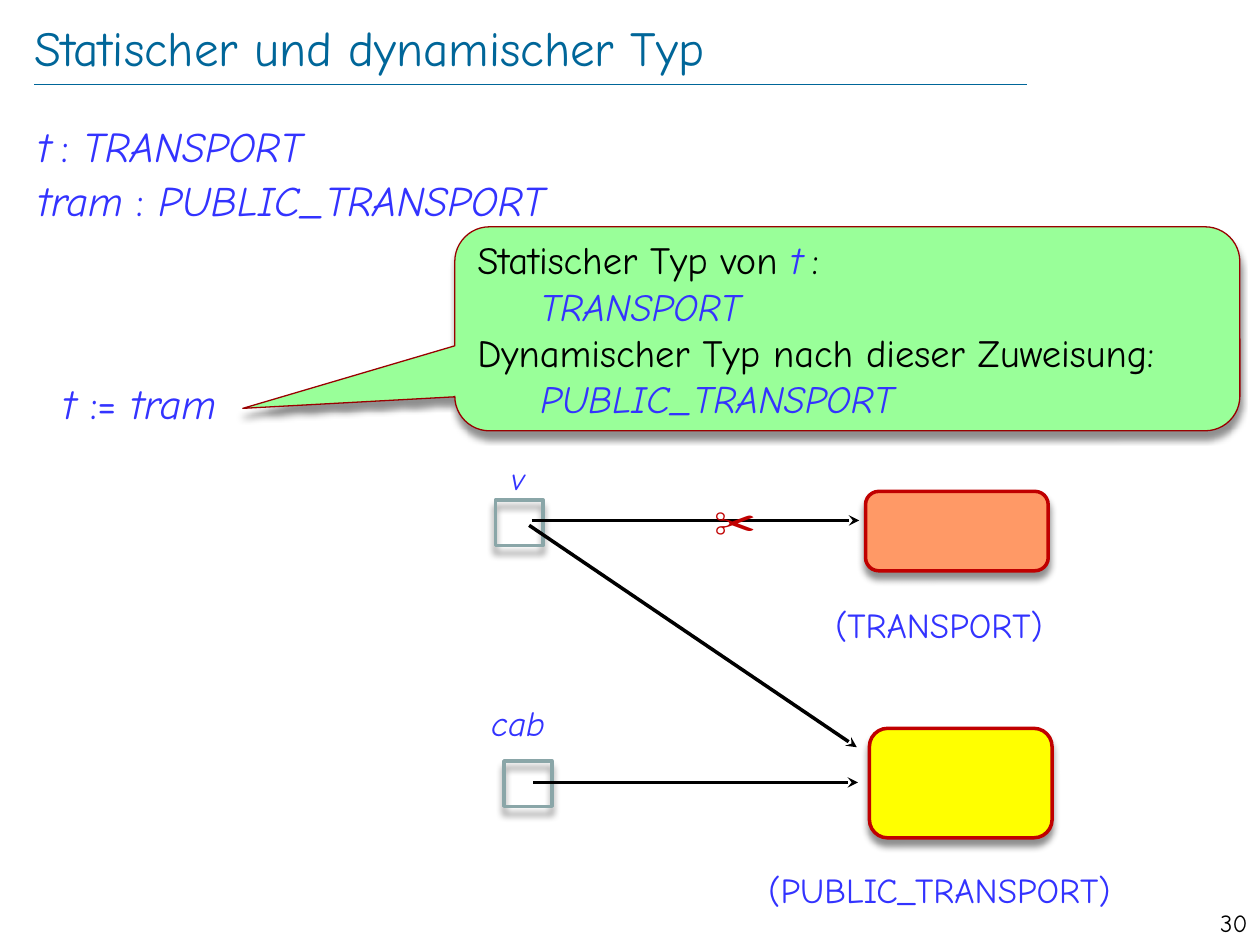
import pptx
import pptx.dml.color
import pptx.enum.shapes
import pptx.enum.text
import pptx.oxml
import pptx.oxml.ns
import pptx.util

Pt = pptx.util.Pt
RGBColor = pptx.dml.color.RGBColor
SHAPE = pptx.enum.shapes.MSO_SHAPE
ALIGN = pptx.enum.text.PP_ALIGN
ANCHOR = pptx.enum.text.MSO_ANCHOR

TEAL = RGBColor(0x00, 0x66, 0x99)
BLUE = RGBColor(0x33, 0x33, 0xFF)
BLACK = RGBColor(0x00, 0x00, 0x00)
RED = RGBColor(0xC0, 0x00, 0x00)
DARK_RED = RGBColor(0x99, 0x00, 0x00)
GREY = RGBColor(0x8A, 0xA6, 0xA8)
GREEN = RGBColor(0x99, 0xFF, 0x99)
ORANGE = RGBColor(0xFF, 0x99, 0x66)
YELLOW = RGBColor(0xFF, 0xFF, 0x00)

NORMAL = {"italic": False}
PLAIN = {"color": BLACK, "italic": False}


def element(tag, **attributes):
    node = pptx.oxml.parse_xml(f"<{tag} {pptx.oxml.ns.nsdecls('a')}/>")
    for name, value in attributes.items():
        node.set(name, str(value))
    return node


def write(frame, paragraphs, font="Comic Neue", size=24, color=BLUE, italic=False,
          align=ALIGN.LEFT, line_spacing=None, gap=0, tab=None, wrap=True):
    """Fill frame; a paragraph is a string or a list of (text, overrides) runs."""
    frame.word_wrap = wrap
    for index, runs in enumerate(paragraphs):
        paragraph = frame.paragraphs[0] if index == 0 else frame.add_paragraph()
        properties = paragraph._p.get_or_add_pPr()
        properties.set("marL", "0")
        properties.set("indent", "0")
        properties.append(element("a:buNone"))
        if tab:
            stops = element("a:tabLst")
            stops.append(element("a:tab", pos=Pt(tab), algn="l"))
            properties.append(stops)
        paragraph.alignment = align
        paragraph.line_spacing = line_spacing
        paragraph.space_before = Pt(gap if index else 0)
        for text, changes in [(runs, {})] if isinstance(runs, str) else runs:
            run = paragraph.add_run()
            run.text = text
            run.font.name = font
            run.font.size = Pt(changes.get("size", size))
            run.font.italic = changes.get("italic", italic)
            run.font.color.rgb = changes.get("color", color)


class TypeSlide:
    def __init__(self, presentation):
        self.slide = presentation.slides.add_slide(presentation.slide_layouts[1])
        self.shapes = self.slide.shapes

    def placeholder(self, index, box, paragraphs, **style):
        holder = self.slide.placeholders[index]
        holder.left, holder.top, holder.width, holder.height = map(Pt, box)
        write(holder.text_frame, paragraphs, **style)
        return holder.text_frame

    def label(self, box, runs, **style):
        frame = self.shapes.add_textbox(*map(Pt, box)).text_frame
        write(frame, [runs], **style)

    def block(self, kind, box, line, fill=None, width=2):
        """Add an outlined preset shape with a soft shadow below it."""
        shape = self.shapes.add_shape(kind, *map(Pt, box))
        if fill is None:
            shape.fill.background()
        else:
            shape.fill.solid()
            shape.fill.fore_color.rgb = fill
        shape.line.color.rgb = line
        shape.line.width = Pt(width)
        shape.shadow.inherit = False
        shadow = element("a:outerShdw", blurRad=Pt(4), dist=Pt(4), dir=5400000,
                         algn="ctr", rotWithShape=0)
        tint = element("a:srgbClr", val=BLACK)
        tint.append(element("a:alpha", val=43000))
        shadow.append(tint)
        shape._element.spPr.find(pptx.oxml.ns.qn("a:effectLst")).append(shadow)
        return shape

    def line(self, start, end, color=BLACK, width=2, arrow=True):
        connector = self.shapes.add_connector(
            pptx.enum.shapes.MSO_CONNECTOR.STRAIGHT, *map(Pt, start + end))
        connector.line.color.rgb = color
        connector.line.width = Pt(width)
        if arrow:
            connector.line._get_or_add_ln().append(element("a:tailEnd", type="stealth"))
        connector._element.spPr.append(element("a:effectLst"))


def main():
    presentation = pptx.Presentation()
    presentation.slide_width, presentation.slide_height = Pt(720), Pt(540)
    page = TypeSlide(presentation)

    page.line((19.5, 48.2), (587, 48.2), color=TEAL, width=0.25, arrow=False)
    page.label((670, 515.5, 50, 17.5), "30", size=14, color=BLACK, align=ALIGN.RIGHT)
    title = page.placeholder(0, (19.5, 9.4, 625.7, 34.6),
                             ["Statischer und dynamischer Typ"], size=28, color=TEAL)
    title.vertical_anchor = ANCHOR.MIDDLE
    title.margin_left = title.margin_top = title.margin_right = title.margin_bottom = 0

    declarations = page.placeholder(1, (14.4, 68.4, 656.6, 74.9), [
        [("t", {}), (" ", {"size": 18}), (":", NORMAL), (" TRANSPORT", {})],
        [("tram ", {}), (":", NORMAL), (" PUBLIC_TRANSPORT", {})],
    ], italic=True, line_spacing=0.9, gap=5)
    declarations.vertical_anchor = ANCHOR.TOP

    for box, fill in (((494.6, 280.8, 104.4, 45.4), ORANGE),
                      ((496.8, 416.2, 104.4, 62.6), YELLOW)):
        page.block(SHAPE.ROUNDED_RECTANGLE, box, RED, fill)
    for left, top in ((283, 285.8), (288, 434.9)):
        page.block(SHAPE.RECTANGLE, (left, top, 27.4, 25.9), GREY)
    for start, end in (((303.8, 297.4), (491, 297.4)),
                       ((302.4, 300.2), (489.6, 427)),
                       ((304.6, 447.1), (490.3, 447.1))):
        page.line(start, end)

    for box, name, size, italic in (
            ((470.2, 341.3, 154, 31.7), "(TRANSPORT)", 20, False),
            ((432, 492.5, 239, 31.7), "(PUBLIC_TRANSPORT)", 20, False),
            ((285.1, 258.5, 23, 28.8), "v", 18, True),
            ((273.6, 397.4, 47.5, 31.7), "cab", 20, True)):
        page.label(box, name, size=size, italic=italic, wrap=False)

    page.label((28.8, 212.4, 179.3, 36),
               [("t ", {}), (":=", NORMAL), (" tram", {})], italic=True)

    callout = page.block(SHAPE.ROUNDED_RECTANGULAR_CALLOUT, (259.9, 129.6, 448.6, 116.6),
                         DARK_RED, GREEN, width=0.75)
    for index, value in enumerate((-0.77, 0.39, 0.17)):
        callout.adjustments[index] = value
    callout.text_frame.vertical_anchor = ANCHOR.MIDDLE
    write(callout.text_frame, [
        [("Statischer Typ von ", PLAIN), ("t", {}), (" ", {"size": 16}), (":", PLAIN)],
        "\tTRANSPORT",
        [("Dynamischer Typ nach dieser Zuweisung:", PLAIN)],
        "\tPUBLIC_TRANSPORT",
    ], size=22, italic=True, tab=72)

    page.label((401, 280.1, 42.5, 36), "✂", color=RED, wrap=False)
    presentation.save("out.pptx")


if __name__ == "__main__":
    main()
